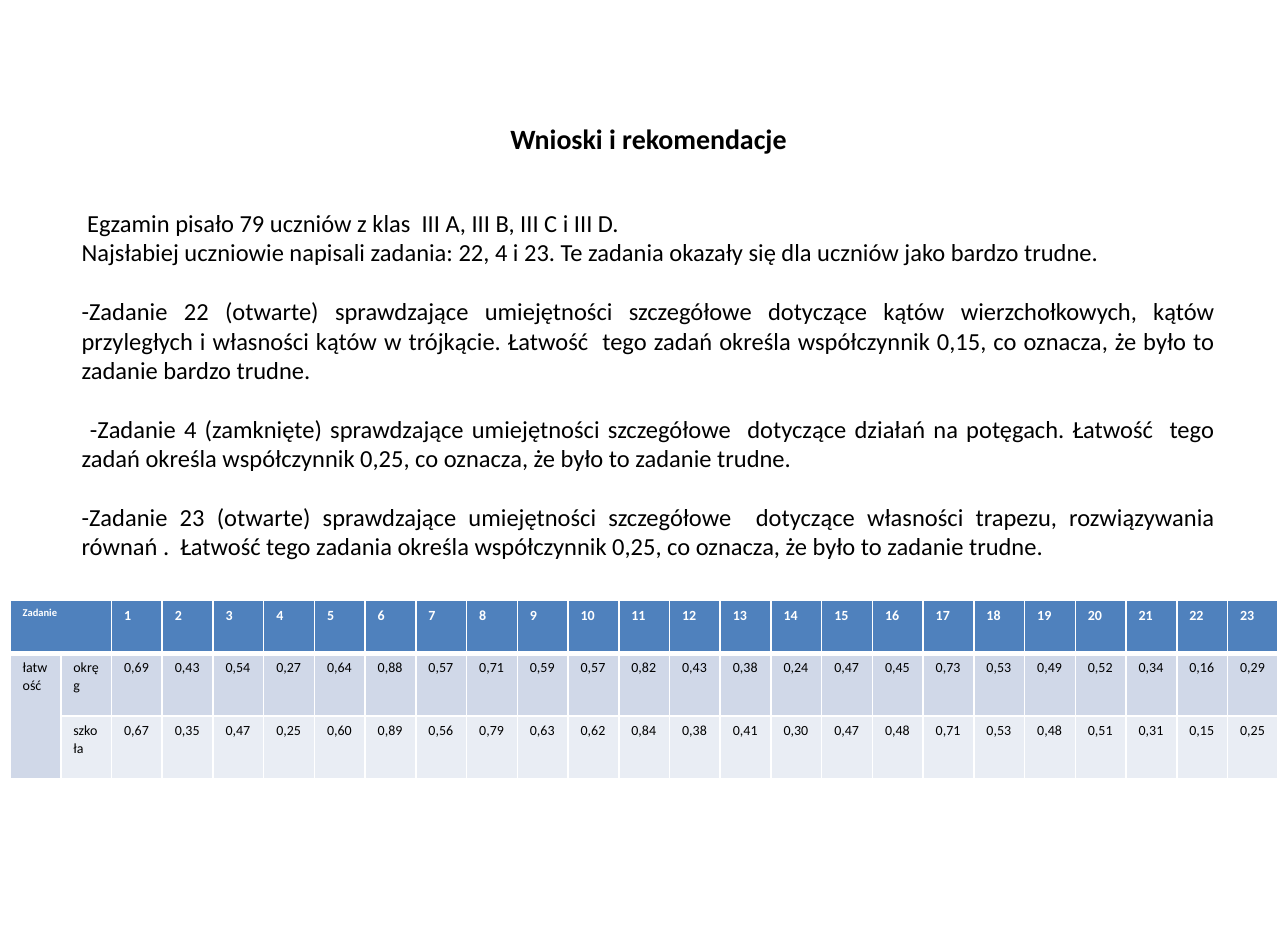
from dataclasses import dataclass

import lxml.etree
import pptx
import pptx.dml.color
import pptx.enum.text
import pptx.oxml.ns
import pptx.util

Inches = pptx.util.Inches
Pt = pptx.util.Pt
Align = pptx.enum.text.PP_ALIGN


@dataclass(frozen=True)
class Theme:
    font: str = "Calibri"
    ink: str = "000000"
    white: str = "FFFFFF"
    header: str = "4F81BD"
    district: str = "D0D8E8"
    school: str = "E9EDF4"
    title_size: float = 16
    body_size: float = 14
    table_size: float = 8
    corner_size: float = 6
    body_line: float = 16.8
    title_gap: float = 30


HEADING = "Wnioski i rekomendacje"
# Each group is set apart from the next by one line of space.
FINDINGS = [
    [
        " Egzamin pisało 79 uczniów z klas  III A, III B, III C i III D.",
        "Najsłabiej uczniowie napisali zadania: 22, 4 i 23. Te zadania okazały się "
        "dla uczniów jako bardzo trudne.",
    ],
    [
        "-Zadanie 22 (otwarte) sprawdzające umiejętności szczegółowe dotyczące kątów "
        "wierzchołkowych, kątów przyległych i własności kątów w trójkącie. Łatwość  "
        "tego zadań określa współczynnik 0,15, co oznacza, że było to zadanie bardzo trudne.",
    ],
    [
        " -Zadanie 4 (zamknięte) sprawdzające umiejętności szczegółowe  dotyczące działań "
        "na potęgach. Łatwość  tego zadań określa współczynnik 0,25, co oznacza, "
        "że było to zadanie trudne.",
    ],
    [
        "-Zadanie 23 (otwarte) sprawdzające umiejętności szczegółowe  dotyczące własności "
        "trapezu, rozwiązywania równań .  Łatwość tego zadania określa współczynnik 0,25, "
        "co oznacza, że było to zadanie trudne.",
    ],
]
DISTRICT = ("0,69 0,43 0,54 0,27 0,64 0,88 0,57 0,71 0,59 0,57 0,82 0,43 "
            "0,38 0,24 0,47 0,45 0,73 0,53 0,49 0,52 0,34 0,16 0,29").split()
SCHOOL = ("0,67 0,35 0,47 0,25 0,60 0,89 0,56 0,79 0,63 0,62 0,84 0,38 "
          "0,41 0,30 0,47 0,48 0,71 0,53 0,48 0,51 0,31 0,15 0,25").split()
TASKS = [str(number) for number in range(1, len(DISTRICT) + 1)]


class SlideBuilder:
    def __init__(self, slide, theme):
        self.slide = slide
        self.theme = theme

    def style(self, paragraph, size, color, bold=False):
        font = paragraph.font
        font.name = self.theme.font
        font.size = Pt(size)
        font.bold = bold
        font.color.rgb = pptx.dml.color.RGBColor.from_string(color)

    def conclusions(self, left, top, width, height, heading, groups):
        theme = self.theme
        frame = self.slide.shapes.add_textbox(
            Inches(left), Inches(top), Inches(width), Inches(height)).text_frame
        frame.word_wrap = True
        frame.margin_top = Inches(0.61)
        title = frame.paragraphs[0]
        title.text = heading
        title.alignment = Align.CENTER
        self.style(title, theme.title_size, theme.ink, bold=True)
        for group_index, group in enumerate(groups):
            for line_index, text in enumerate(group):
                finding = frame.add_paragraph()
                finding.text = text
                finding.alignment = Align.JUSTIFY
                finding.line_spacing = Pt(theme.body_line)
                if line_index == 0:
                    gap = theme.body_line if group_index else theme.title_gap
                    finding.space_before = Pt(gap)
                self.style(finding, theme.body_size, theme.ink)

    def borders(self, cell, bottom):
        properties = cell._tc.get_or_add_tcPr()
        for side, points in (("L", 1), ("R", 1), ("T", 1), ("B", bottom)):
            line = lxml.etree.SubElement(
                properties, pptx.oxml.ns.qn(f"a:ln{side}"), w=str(Pt(points)))
            fill = lxml.etree.SubElement(line, pptx.oxml.ns.qn("a:solidFill"))
            lxml.etree.SubElement(
                fill, pptx.oxml.ns.qn("a:srgbClr"), val=self.theme.white)

    def cell(self, cell, text, fill, size, color, header):
        cell.margin_left = cell.margin_right = Inches(0.1)
        self.borders(cell, bottom=3 if header else 1)
        cell.fill.solid()
        cell.fill.fore_color.rgb = pptx.dml.color.RGBColor.from_string(fill)
        cell.text = text
        self.style(cell.text_frame.paragraphs[0], size, color, bold=header)

    def results(self, left, top, width, row_heights, rows):
        theme = self.theme
        fills = (theme.header, theme.district, theme.school)
        column_count = len(rows[0])
        table = self.slide.shapes.add_table(
            len(rows), column_count, Inches(left), Inches(top),
            Inches(width), Inches(sum(row_heights))).table
        for column in table.columns:
            column.width = Inches(width / column_count)
        for row_index, (values, height) in enumerate(zip(rows, row_heights)):
            table.rows[row_index].height = Inches(height)
            header = row_index == 0
            for column_index, value in enumerate(values):
                corner = header and column_index < 2
                self.cell(table.cell(row_index, column_index), value, fills[row_index],
                          theme.corner_size if corner else theme.table_size,
                          theme.white if header else theme.ink, header)
        table.cell(0, 0).merge(table.cell(0, 1))
        table.cell(1, 0).merge(table.cell(2, 0))


def main():
    presentation = pptx.Presentation()
    presentation.slide_width = Inches(26 / 2.54)  # 26 cm
    presentation.slide_height = Inches(7.5)
    # The default template labels its size as 4:3, which no longer holds.
    presentation.element.find(pptx.oxml.ns.qn("p:sldSz")).attrib.pop("type", None)
    slide = presentation.slides.add_slide(presentation.slide_layouts[6])
    builder = SlideBuilder(slide, Theme())
    builder.conclusions(0.55, 0.36, 9.21, 6.85, HEADING, FINDINGS)
    builder.results(0.08, 4.77, 10.08, (0.42, 0.5, 0.5), [
        ["Zadanie", "", *TASKS],
        ["łatwość", "okręg", *DISTRICT],
        ["", "szkoła", *SCHOOL],
    ])
    presentation.save("out.pptx")


if __name__ == "__main__":
    main()
